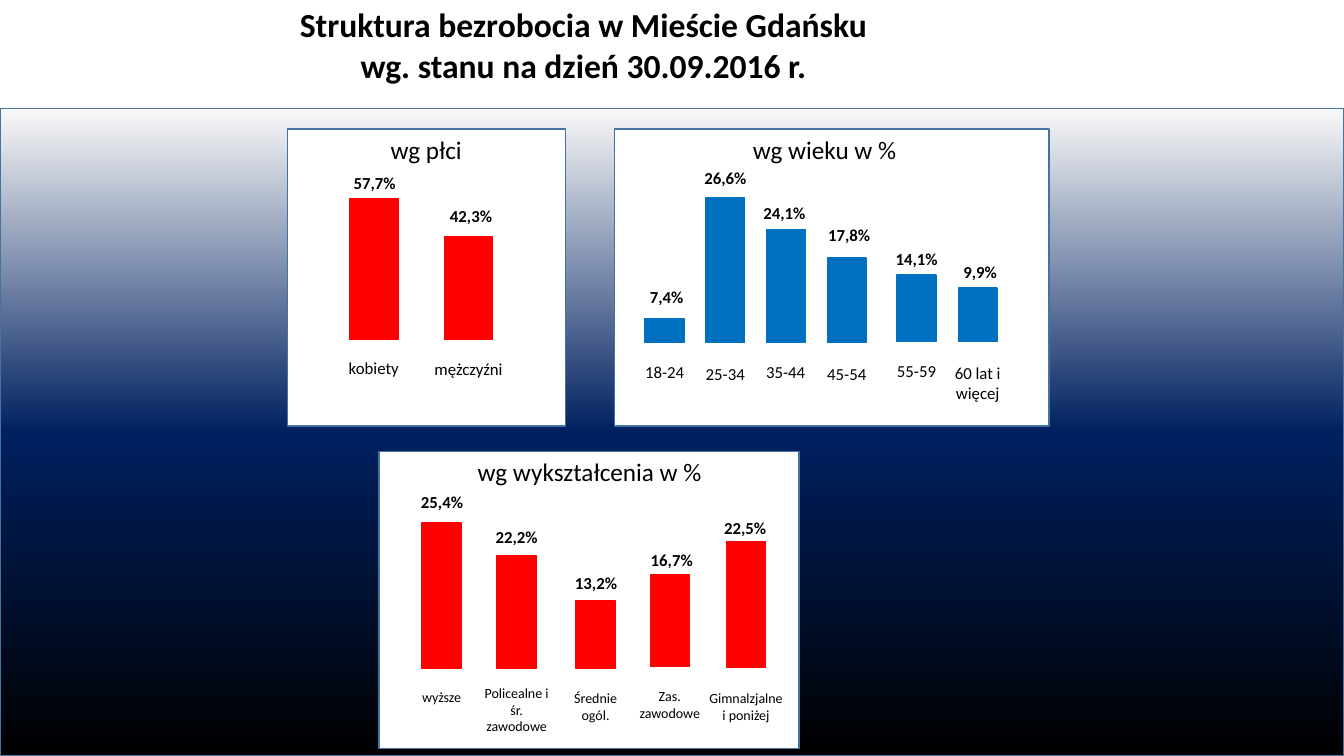
from copy import deepcopy
from dataclasses import dataclass

from pptx import Presentation
from pptx.dml.color import RGBColor
from pptx.enum.shapes import MSO_SHAPE
from pptx.enum.text import MSO_AUTO_SIZE, PP_ALIGN
from pptx.util import Cm, Pt

BLACK, WHITE, RED, BLUE, BORDER = "000000", "FFFFFF", "FF0000", "0070C0", "43739E"
CATEGORY_12 = {"size": Pt(12), "bold": False}
CATEGORY_10 = {"size": Pt(10), "bold": False}
VALUE = {"size": Pt(12), "bold": True}
PANEL_TITLE = {"size": Pt(18), "bold": False}
SLIDE_TITLE = {"size": Pt(24), "bold": True}


@dataclass
class Column:
    """One bar with its category below and its value above, in centimetres."""
    category: str
    value: str
    center: float
    top: float
    base: float
    value_center: float
    value_top: float
    category_top: float
    category_width: float
    category_lines: int = 1


@dataclass
class Panel:
    """A framed group of bars under one title, in centimetres."""
    title: str
    frame: tuple
    title_center: float
    title_width: float
    bar_width: float
    color: str
    category_format: dict
    columns: list


PANELS = [
    Panel("wg wykształcenia w %", (9.55, 11.38, 10.59, 7.49), 14.86, 6.5, 0.98, RED, CATEGORY_10, [
        Column("wyższe", "25,4%", 11.13, 13.18, 16.84, 11.14, 12.27, 17.22, 2.39),
        Column("Policealne i śr. zawodowe", "22,2%", 13.02, 14, 16.84, 13.02, 13.16, 17.12, 2.24, 3),
        Column("Średnie ogól.", "13,2%", 15.01, 15.14, 16.84, 15.02, 14.3, 17.25, 2.03, 2),
        Column("Zas. zawodowe", "16,7%", 16.88, 14.48, 16.79, 16.93, 13.72, 17.2, 2.11, 2),
        Column("Gimnalzjalne i poniżej", "22,5%", 18.8, 13.64, 16.81, 18.78, 12.93, 17.25, 2.39, 2),
    ]),
    Panel("wg wieku w %", (15.49, 3.25, 10.95, 7.49), 20.78, 4.17, 0.98, BLUE, CATEGORY_12, [
        Column("18-24", "7,4%", 16.75, 8.03, 8.64, 16.8, 7.11, 8.99, 2.11),
        Column("25-34", "26,6%", 18.28, 4.98, 8.64, 18.28, 4.11, 9.04, 2.39),
        Column("35-44", "24,1%", 19.8, 5.79, 8.64, 19.77, 4.98, 8.99, 2.11),
        Column("45-54", "17,8%", 21.34, 6.5, 8.64, 21.4, 5.54, 9.04, 2.39),
        Column("55-59", "14,1%", 23.1, 6.93, 8.61, 23.1, 6.15, 8.97, 2.11),
        Column("60 lat i więcej", "9,9%", 24.64, 7.26, 8.61, 24.7, 6.48, 9.02, 2.39, 2),
    ]),
    Panel("wg płci", (7.24, 3.25, 7.01, 7.49), 10.74, 2.79, 1.22, RED, CATEGORY_12, [
        Column("kobiety", "57,7%", 9.42, 5, 8.56, 9.44, 4.22, 8.89, 2.11),
        Column("mężczyźni", "42,3%", 11.81, 5.97, 8.56, 11.87, 5.05, 8.92, 2.39),
    ]),
]


def rgb(hex_color):
    """Turn a hex string into a colour."""
    return RGBColor.from_string(hex_color)


def add_rect(slide, left, top, width, height, fill, border=None):
    """Add a flat rectangle, with a border if a colour is given."""
    rect = slide.shapes.add_shape(MSO_SHAPE.RECTANGLE, Cm(left), Cm(top), Cm(width), Cm(height))
    rect.shadow.inherit = False
    rect.fill.solid()
    rect.fill.fore_color.rgb = rgb(fill)
    if border:
        rect.line.color.rgb = rgb(border)
        rect.line.width = Pt(1)
    else:
        rect.line.fill.background()
    return rect


def write_lines(holder, lines, font_format):
    """Write centred paragraphs in a shape that grows with its text."""
    frame = holder.text_frame
    frame.word_wrap = True
    frame.auto_size = MSO_AUTO_SIZE.SHAPE_TO_FIT_TEXT
    frame.text = "\n".join(lines)
    for paragraph in frame.paragraphs:
        paragraph.alignment = PP_ALIGN.CENTER
        for run in paragraph.runs:
            run.font.color.rgb = rgb(BLACK)
            for name, setting in {"name": "Calibri", **font_format}.items():
                setattr(run.font, name, setting)


def add_label(slide, text, center, top, width, font_format, line_count=1):
    """Add a text box centred on a horizontal position."""
    height = 0.25 + line_count * font_format["size"].cm * 1.2
    label = slide.shapes.add_textbox(Cm(center - width / 2), Cm(top), Cm(width), Cm(height))
    write_lines(label, [text], font_format)


def add_backdrop(slide):
    """Add the field that fades from black at the bottom to near white."""
    backdrop = add_rect(slide, 0, 2.74, 33.87, 16.31, BLACK, BORDER)
    backdrop.fill.gradient()
    backdrop.fill.gradient_angle = 90
    stop_list = backdrop.element.xpath(".//a:gsLst")[0]
    stop_list.insert(1, deepcopy(stop_list[0]))
    fade = [(0, "000000"), (0.5, "002060"), (1, "F8F8F8")]
    for stop, (position, color) in zip(backdrop.fill.gradient_stops, fade):
        stop.position = position
        stop.color.rgb = rgb(color)


def add_title(slide):
    """Add the slide title on its white band."""
    band = add_rect(slide, -1.12, -0.03, 31.65, 2.31, WHITE)
    write_lines(band, ["Struktura bezrobocia w Mieście Gdańsku",
                       "wg. stanu na dzień 30.09.2016 r."], SLIDE_TITLE)


def add_panel(slide, panel):
    """Add one framed group with its title, bars and labels."""
    add_rect(slide, *panel.frame, WHITE, BORDER)
    add_label(slide, panel.title, panel.title_center, panel.frame[1], panel.title_width, PANEL_TITLE)
    for column in panel.columns:
        add_rect(slide, column.center - panel.bar_width / 2, column.top,
                 panel.bar_width, column.base - column.top, panel.color, panel.color)
        add_label(slide, column.category, column.center, column.category_top,
                  column.category_width, panel.category_format, column.category_lines)
        add_label(slide, column.value, column.value_center, column.value_top, 2.11, VALUE)


def main():
    """Build and save the slide."""
    deck = Presentation()
    deck.slide_width, deck.slide_height = Cm(33.87), Cm(19.05)
    slide = deck.slides.add_slide(deck.slide_layouts[6])
    add_backdrop(slide)
    add_title(slide)
    for panel in PANELS:
        add_panel(slide, panel)
    deck.save("out.pptx")


if __name__ == "__main__":
    main()
